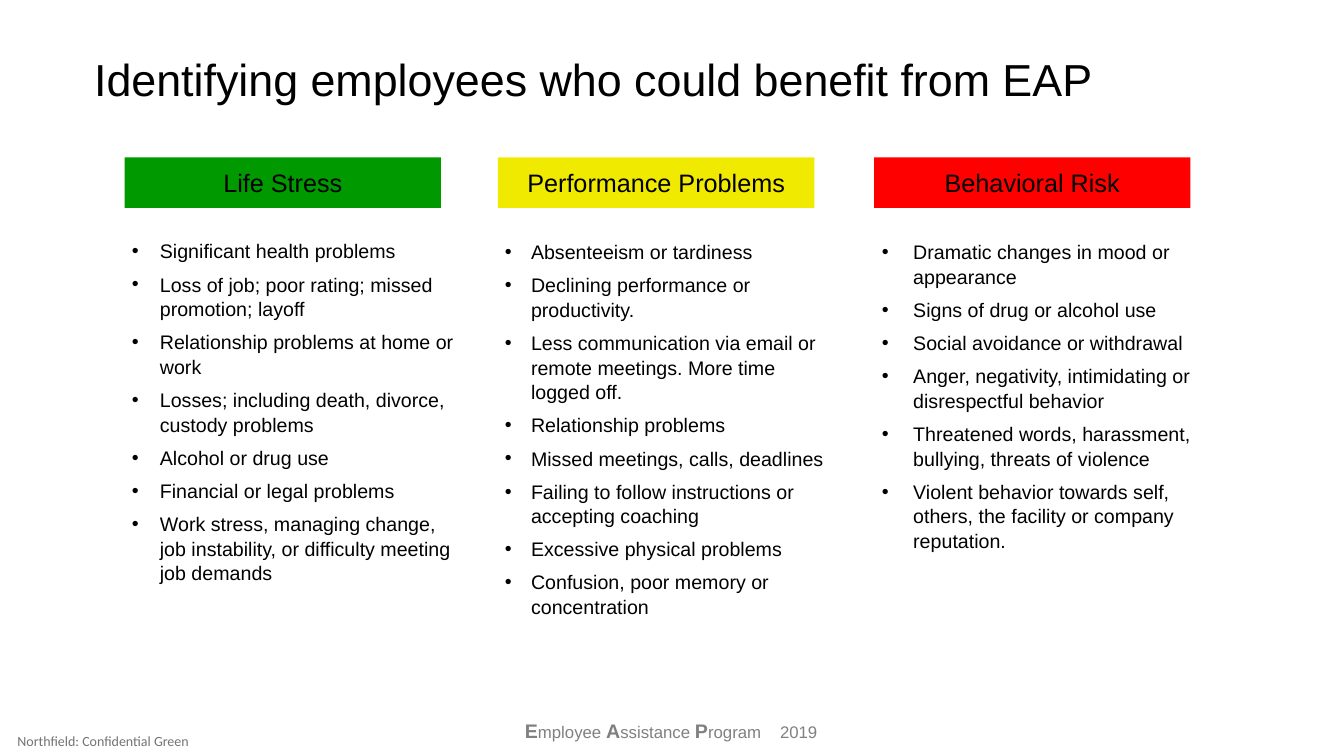
from dataclasses import dataclass

from lxml import etree
from pptx import Presentation
from pptx.dml.color import RGBColor
from pptx.enum import shapes, text
from pptx.oxml import ns
from pptx.util import Pt

BLACK, GREY, MARKING_GREY = "000000", "808080", "737373"
HEADING_TOP, HEADING_WIDTH, HEADING_HEIGHT = 112.5, 226, 36


@dataclass
class Column:
    heading: str
    fill: str
    heading_left: float
    list_box: tuple[float, float, float, float]
    indent: float
    placeholder_idx: int
    signs: list[str]


COLUMNS = [
    Column("Life Stress", "009900", 89, (87, 166.5, 247.7, 249), 20, 1, [
        "Significant health problems",
        "Loss of job; poor rating; missed promotion; layoff",
        "Relationship problems at home or work",
        "Losses; including death, divorce, custody problems",
        "Alcohol or drug use",
        "Financial or legal problems",
        "Work stress, managing change, job instability, or difficulty meeting job demands",
    ]),
    Column("Performance Problems", "F0EA00", 355.7, (353.5, 167, 246.3, 249), 18.6, 2, [
        "Absenteeism or tardiness",
        "Declining performance or productivity.",
        "Less communication via email or remote meetings. More time logged off.",
        "Relationship problems",
        "Missed meetings, calls, deadlines",
        "Failing to follow instructions or accepting coaching",
        "Excessive physical problems",
        "Confusion, poor memory or concentration",
    ]),
    Column("Behavioral Risk", "FF0000", 624.3, (622.8, 167, 261.4, 224), 22.3, 3, [
        "Dramatic changes in mood or appearance",
        "Signs of drug or alcohol use",
        "Social avoidance or withdrawal",
        "Anger, negativity, intimidating or disrespectful behavior",
        "Threatened words, harassment, bullying, threats of violence",
        "Violent behavior towards self, others, the facility or company reputation.",
    ]),
]


def rgb(hex_colour: str) -> RGBColor:
    return RGBColor.from_string(hex_colour)


def add_run(paragraph, content: str, *, size: float, colour: str = BLACK,
            font: str = "Arial", bold: bool = False, tracking: float = 0) -> None:
    """Append formatted text; tracking is extra letter spacing in points."""
    run = paragraph.add_run()
    run.text = content
    run.font.size = Pt(size)
    run.font.name = font
    run.font.bold = bold
    run.font.color.rgb = rgb(colour)
    if tracking:
        run.font._element.set("spc", str(round(tracking * 100)))


def place(shape, left: float, top: float, width: float, height: float) -> None:
    shape.left, shape.top = Pt(left), Pt(top)
    shape.width, shape.height = Pt(width), Pt(height)


def add_bullet(paragraph, indent: float) -> None:
    properties = paragraph._p.get_or_add_pPr()
    properties.set("marL", str(Pt(indent)))
    properties.set("indent", str(-Pt(indent)))
    etree.SubElement(properties, ns.qn("a:buFont")).set("typeface", "Arial")
    etree.SubElement(properties, ns.qn("a:buChar")).set("char", "•")


def add_title(slide) -> None:
    title = slide.shapes.title
    place(title, 60, 30, 798, 90)
    frame = title.text_frame
    frame.auto_size = text.MSO_AUTO_SIZE.NONE
    frame.vertical_anchor = text.MSO_ANCHOR.TOP
    frame.margin_top = Pt(7)
    frame.paragraphs[0].alignment = text.PP_ALIGN.LEFT
    add_run(frame.paragraphs[0], "Identifying employees who could benefit from EAP", size=32)


def add_heading(slide, column: Column) -> None:
    banner = slide.shapes.add_shape(
        shapes.MSO_SHAPE.RECTANGLE, Pt(column.heading_left), Pt(HEADING_TOP),
        Pt(HEADING_WIDTH), Pt(HEADING_HEIGHT))
    banner.shadow.inherit = False
    banner.fill.solid()
    banner.fill.fore_color.rgb = rgb(column.fill)
    banner.line.fill.background()
    banner.text_frame.vertical_anchor = text.MSO_ANCHOR.MIDDLE
    paragraph = banner.text_frame.paragraphs[0]
    paragraph.alignment = text.PP_ALIGN.CENTER
    add_run(paragraph, column.heading, size=18)


def add_signs(slide, column: Column) -> None:
    body = slide.placeholders[column.placeholder_idx]
    place(body, *column.list_box)
    frame = body.text_frame
    frame.auto_size = text.MSO_AUTO_SIZE.NONE
    frame.vertical_anchor = text.MSO_ANCHOR.TOP
    for number, sign in enumerate(column.signs):
        paragraph = frame.add_paragraph() if number else frame.paragraphs[0]
        add_bullet(paragraph, column.indent)
        paragraph.space_before = Pt(6 if number else 0)
        paragraph.line_spacing = 1.05
        add_run(paragraph, sign, size=14)


def add_footer(slide) -> None:
    footer = slide.shapes.add_textbox(Pt(284.4), Pt(509.8), Pt(390), Pt(24.5))
    footer.text_frame.word_wrap = True
    paragraph = footer.text_frame.paragraphs[0]
    paragraph.alignment = text.PP_ALIGN.CENTER
    for initial, rest in (("E", "mployee "), ("A", "ssistance "), ("P", "rogram")):
        add_run(paragraph, initial, size=14, colour=GREY, bold=True)
        add_run(paragraph, rest, size=12, colour=GREY)
    add_run(paragraph, " ", size=12, colour=GREY, tracking=10)
    add_run(paragraph, "2019", size=12, colour=GREY)


def add_marking(slide) -> None:
    marking = slide.shapes.add_textbox(Pt(0), Pt(519), Pt(148.3), Pt(21))
    frame = marking.text_frame
    frame.word_wrap = True
    frame.vertical_anchor = text.MSO_ANCHOR.MIDDLE
    frame.margin_left = Pt(12.5)
    frame.margin_top = frame.margin_right = frame.margin_bottom = Pt(0)
    add_run(frame.paragraphs[0], "Northfield: Confidential Green", size=10,
            colour=MARKING_GREY, font="Calibri")


def main() -> None:
    deck = Presentation()
    deck.slide_width, deck.slide_height = Pt(960), Pt(540)
    slide = deck.slides.add_slide(deck.slide_layouts.get_by_name("Comparison"))
    spare = slide.placeholders[4]._element
    spare.getparent().remove(spare)

    add_footer(slide)
    add_marking(slide)
    add_title(slide)
    for column in COLUMNS:
        add_heading(slide, column)
        add_signs(slide, column)
    deck.save("out.pptx")


if __name__ == "__main__":
    main()
